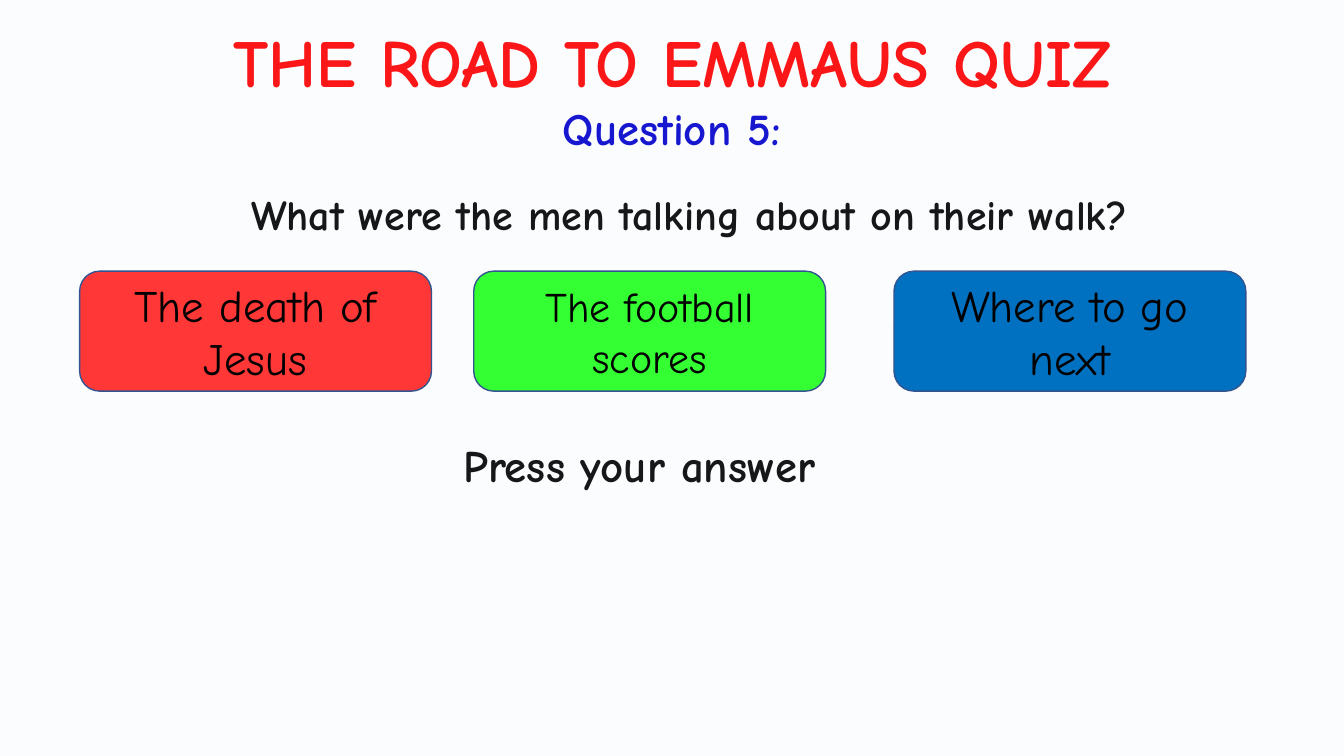
import pptx
import pptx.util
import pptx.dml.color
import pptx.enum.shapes
import pptx.enum.text
import lxml.etree
from dataclasses import dataclass

Pt = pptx.util.Pt
Align = pptx.enum.text.PP_ALIGN
Shape = pptx.enum.shapes.MSO_SHAPE
Anchor = pptx.enum.text.MSO_ANCHOR


@dataclass(frozen=True)
class Theme:
    font: str = "Comic Neue"
    head: int = 48
    large: int = 32
    small: int = 30
    red: str = "FF0000"
    navy: str = "0000CC"
    black: str = "000000"
    white: str = "FFFFFF"
    veil: str = "DAE3F3"
    edge: str = "325491"
    answers: tuple = ("FF3737", "33FF33", "0070C0")


THEME = Theme()


def rgb(code):
    return pptx.dml.color.RGBColor.from_string(code)


def place(shape, left, top, width, height):
    shape.left, shape.top = Pt(left), Pt(top)
    shape.width, shape.height = Pt(width), Pt(height)


def write(shape, text, size, color, bold=True, align=Align.CENTER, wrap=True, anchor=Anchor.TOP):
    frame = shape.text_frame
    frame.text = text
    frame.word_wrap = wrap
    frame.auto_size = pptx.enum.text.MSO_AUTO_SIZE.NONE
    frame.vertical_anchor = anchor
    para = frame.paragraphs[0]
    para.alignment = align
    font = para.runs[0].font
    font.name = THEME.font
    font.size = Pt(size)
    font.bold = bold
    font.color.rgb = rgb(color)
    return para


def add_title(slide, text):
    title = slide.shapes.title
    place(title, 94.3, 10.8, 771.8, 65.5)
    write(title, text, THEME.head, THEME.red, wrap=False)


def add_label(slide, box, text, size, color, **style):
    label = slide.shapes.add_textbox(*map(Pt, box))
    return write(label, text, size, color, **style)


def add_panel(slide, kind, box, fill):
    panel = slide.shapes.add_shape(kind, *map(Pt, box))
    panel.shadow.inherit = False
    panel.fill.solid()
    panel.fill.fore_color.rgb = rgb(fill)
    panel.line.color.rgb = rgb(THEME.edge)
    panel.line.width = Pt(1)
    return panel


def add_veil(slide):
    veil = add_panel(slide, Shape.RECTANGLE, (-31, -55.4, 1021.7, 628.6), THEME.veil)
    tint = veil.fill._xPr.find(".//" + pptx.oxml.ns.qn("a:srgbClr"))
    lxml.etree.SubElement(tint, pptx.oxml.ns.qn("a:alpha"), val="10000")


def add_answer(slide, left, text, size, fill):
    button = add_panel(slide, Shape.ROUNDED_RECTANGLE, (left, 193.7, 251.3, 85.7), fill)
    write(button, text, size, THEME.black, bold=False, anchor=Anchor.MIDDLE)


def main():
    deck = pptx.Presentation()
    deck.slide_width, deck.slide_height = Pt(960), Pt(540)
    slide = deck.slides.add_slide(deck.slide_layouts[5])
    slide.background.fill.solid()
    slide.background.fill.fore_color.rgb = rgb(THEME.white)

    add_title(slide, "THE ROAD TO EMMAUS QUIZ")
    ask = add_label(slide, (46.8, 127.4, 891.4, 85.7),
                    "What were the men talking about on their walk?",
                    THEME.small, THEME.black)
    ask.line_spacing = Pt(40)
    ask.space_before = Pt(10)
    press = add_label(slide, (324, 313.2, 484.6, 51.8), "Press your answer",
                      THEME.large, THEME.black, align=Align.LEFT)
    press.line_spacing = 0.9
    press.space_before = Pt(7.5)
    add_label(slide, (321.1, 68.4, 317.5, 46.1), "Question 5:", THEME.large, THEME.navy)
    add_veil(slide)

    answers = (
        (56.9, "The death of Jesus", THEME.large),
        (338.4, "The football scores", THEME.small),
        (638.6, "Where to go next", THEME.large),
    )
    for (left, text, size), fill in zip(answers, THEME.answers):
        add_answer(slide, left, text, size, fill)

    deck.save("out.pptx")


if __name__ == "__main__":
    main()
